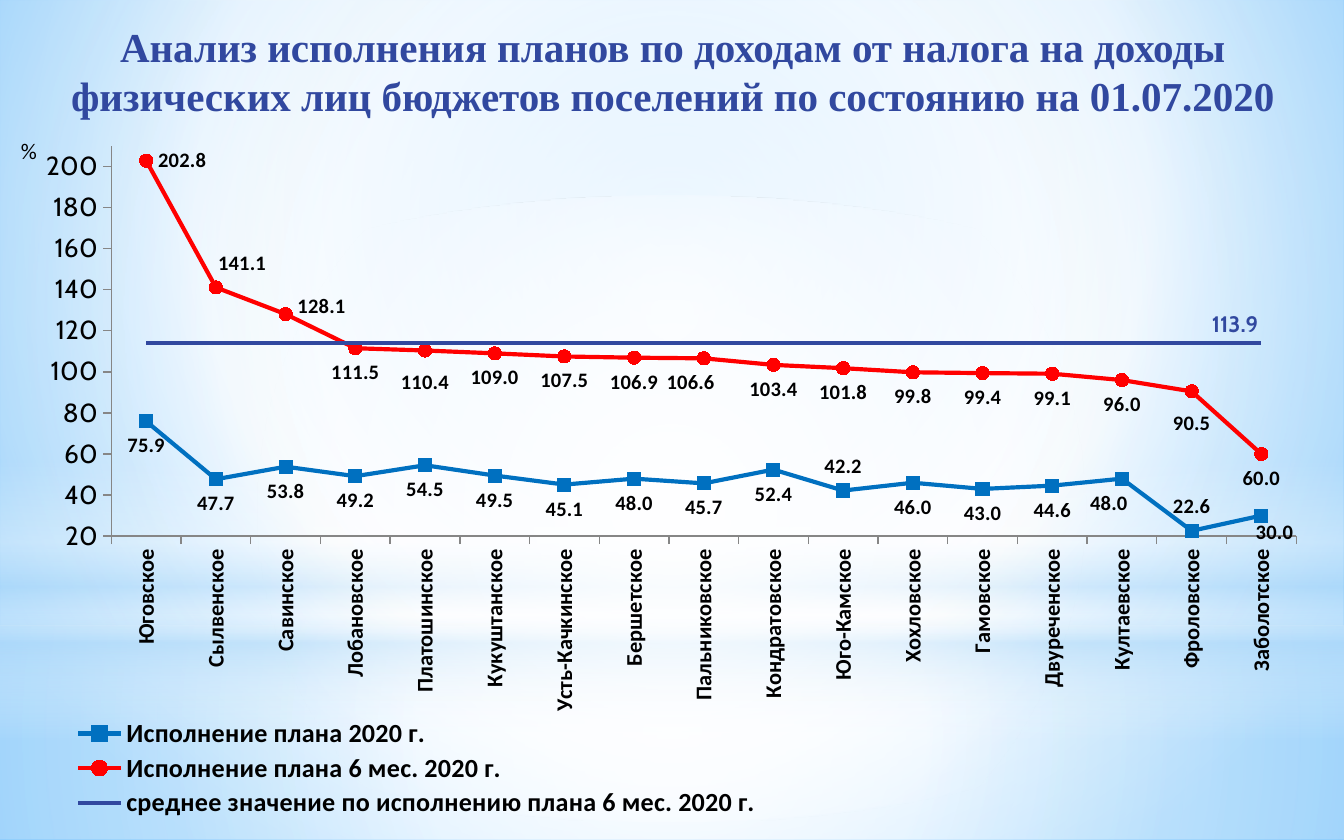
from lxml import etree
from pptx import Presentation
from pptx.chart.data import CategoryChartData
from pptx.dml.color import RGBColor
from pptx.enum.chart import (XL_CHART_TYPE, XL_LABEL_POSITION, XL_LEGEND_POSITION,
                             XL_MARKER_STYLE, XL_TICK_MARK)
from pptx.enum.shapes import MSO_SHAPE
from pptx.enum.text import MSO_ANCHOR, MSO_AUTO_SIZE, PP_ALIGN
from pptx.oxml import parse_xml
from pptx.util import Pt

ABOVE, BELOW, RIGHT = XL_LABEL_POSITION.ABOVE, XL_LABEL_POSITION.BELOW, XL_LABEL_POSITION.RIGHT
SQUARE, CIRCLE, NO_MARKER = XL_MARKER_STYLE.SQUARE, XL_MARKER_STYLE.CIRCLE, XL_MARKER_STYLE.NONE
RECTANGLE, OVAL = MSO_SHAPE.RECTANGLE, MSO_SHAPE.OVAL
LINE_MARKERS = XL_CHART_TYPE.LINE_MARKERS
LEGEND_BOTTOM = XL_LEGEND_POSITION.BOTTOM
TICK_OUTSIDE = XL_TICK_MARK.OUTSIDE
CENTER, TOP, NO_FIT = PP_ALIGN.CENTER, MSO_ANCHOR.TOP, MSO_AUTO_SIZE.NONE

BLACK = RGBColor(0x00, 0x00, 0x00)
WHITE = RGBColor(0xFF, 0xFF, 0xFF)
GREY = RGBColor(0x86, 0x86, 0x86)
NAVY = RGBColor(0x31, 0x48, 0x9F)
BLUE = RGBColor(0x00, 0x70, 0xC0)
RED = RGBColor(0xFF, 0x00, 0x00)
SKY = RGBColor(0x9E, 0xD5, 0xFF)
DEEP_SKY = RGBColor(0x5B, 0xB9, 0xFF)
PALE_SKY = RGBColor(0xB4, 0xDC, 0xFA)

DRAWING = "http://schemas.openxmlformats.org/drawingml/2006/main"
CHART = "http://schemas.openxmlformats.org/drawingml/2006/chart"
NUMBER_FORMAT = "#,##0.0"

TITLE = ("Анализ исполнения планов по доходам от налога на доходы "
         "физических лиц бюджетов поселений по состоянию на 01.07.2020")
SETTLEMENTS = ["Юговское", "Сылвенское", "Савинское", "Лобановское", "Платошинское",
               "Кукуштанское", "Усть-Качкинское", "Бершетское", "Пальниковское",
               "Кондратовское", "Юго-Камское", "Хохловское", "Гамовское", "Двуреченское",
               "Култаевское", "Фроловское", "Заболотское"]
YEAR_PLAN = [75.9, 47.7, 53.8, 49.2, 54.5, 49.5, 45.1, 48, 45.7, 52.4, 42.2, 46, 43, 44.6,
             48, 22.6, 30]
HALF_YEAR_PLAN = [202.8, 141.1, 128.1, 111.5, 110.4, 109, 107.5, 106.9, 106.6, 103.4, 101.8,
                  99.8, 99.4, 99.1, 96, 90.5, 60]
AVERAGE = [113.9] * len(SETTLEMENTS)
SERIES = [
    ("Исполнение плана 2020 г.", YEAR_PLAN, BLUE, SQUARE),
    ("Исполнение плана 6 мес. 2020 г.", HALF_YEAR_PLAN, RED, CIRCLE),
    ("среднее значение по исполнению плана 6 мес. 2020 г.", AVERAGE, NAVY, NO_MARKER),
]
POINT_LABELS = [
    (0, 10, ABOVE, 0, 0), (0, 14, BELOW, -0.01, 0), (0, 15, ABOVE, 0, 0),
    (0, 16, BELOW, 0.01, -0.01),
    (1, 0, RIGHT, 0, 0), (1, 1, ABOVE, 0.02, 0), (1, 2, RIGHT, 0, -0.01),
    (1, 4, BELOW, 0, 0.01), (1, 8, BELOW, -0.01, 0), (1, 15, BELOW, 0, 0.01),
    (2, 16, ABOVE, -0.02, 0),
]


def format_font(font, size, name, color=BLACK, bold=False):
    """Set the size, typeface, colour and weight of a font."""
    font.size, font.name, font.bold = Pt(size), name, bold
    font.color.rgb = color


def write_text(text_frame, text, align=CENTER, **font_format):
    """Write one formatted paragraph into a text frame."""
    paragraph = text_frame.paragraphs[0]
    paragraph.alignment = align
    run = paragraph.add_run()
    run.text = text
    format_font(run.font, **font_format)


def apply_gradient(fill, parent, stops, focus=None):
    """Give a fill a circular gradient, or a vertical one without a focus."""
    fill.solid()
    fill.fore_color.rgb = WHITE
    stop_xml = "".join(
        f'<a:gs pos="{position * 1000}"><a:srgbClr val="{color}">'
        f'<a:alpha val="{alpha * 1000}"/></a:srgbClr></a:gs>'
        for position, color, alpha in stops)
    direction = '<a:lin ang="5400000" scaled="0"/>'
    if focus:
        left, top, right, bottom = (share * 1000 for share in focus)
        direction = (f'<a:path path="circle"><a:fillToRect l="{left}" t="{top}" '
                     f'r="{right}" b="{bottom}"/></a:path>')
    gradient = parse_xml(f'<a:gradFill xmlns:a="{DRAWING}" rotWithShape="1">'
                         f'<a:gsLst>{stop_xml}</a:gsLst>{direction}</a:gradFill>')
    solid = parent.xpath(".//a:solidFill")[0]
    solid.getparent().replace(solid, gradient)


def add_glow(slide, kind, top, height, stops, focus=None):
    """Add a full-width translucent gradient layer."""
    shape = slide.shapes.add_shape(kind, 0, Pt(top), Pt(720), Pt(height))
    shape.shadow.inherit = False
    shape.line.fill.background()
    apply_gradient(shape.fill, shape.element.spPr, stops, focus)


def add_backdrop(slide):
    """Paint the background and its glowing layers."""
    middle = (50, 50, 50, 50)
    apply_gradient(slide.background.fill, slide.element.cSld,
                   [(0, SKY, 100), (60, WHITE, 100), (100, DEEP_SKY, 100)], (20, 10, 20, 60))
    add_glow(slide, RECTANGLE, 335, 115,
             [(0, WHITE, 91), (37, WHITE, 76), (100, PALE_SKY, 79)], middle)
    add_glow(slide, RECTANGLE, 0, 335,
             [(0, WHITE, 89), (48, WHITE, 62), (100, PALE_SKY, 79)], middle)
    add_glow(slide, RECTANGLE, 247, 150,
             [(0, WHITE, 0), (29, WHITE, 30), (45, PALE_SKY, 40), (55, WHITE, 26),
              (65, PALE_SKY, 60), (100, WHITE, 0)])
    add_glow(slide, OVAL, 105, 335, [(0, WHITE, 100), (56, WHITE, 0)], middle)


def add_title(slide):
    """Place and fill the title above the backdrop."""
    title = slide.shapes.title
    title.left, title.top, title.width, title.height = Pt(14.4), Pt(8), Pt(692), Pt(37.5)
    text_frame = title.text_frame
    text_frame.word_wrap, text_frame.auto_size = True, NO_FIT
    text_frame.vertical_anchor = TOP
    write_text(text_frame, TITLE, size=22, name="Times New Roman", color=NAVY, bold=True)
    slide.shapes.element.append(title.element)


def make_layout(target="", mode="edge", **shares):
    """Return a manual chart layout with the given shares of the chart area."""
    layout = etree.Element(f"{{{CHART}}}layout", nsmap={"c": CHART})
    manual = etree.SubElement(layout, f"{{{CHART}}}manualLayout")
    settings = [("layoutTarget", target), ("xMode", mode), ("yMode", mode), *shares.items()]
    for name, value in settings:
        if value != "":
            etree.SubElement(manual, f"{{{CHART}}}{name}").set("val", str(value))
    return layout


def format_series(series, color, marker):
    """Set the line, markers and common labels of a series."""
    series.smooth = False
    series.format.line.width = Pt(2.25)
    series.format.line.color.rgb = color
    series.marker.style = marker
    labels = series.data_labels
    labels.show_value = marker != NO_MARKER
    if marker != NO_MARKER:
        series.marker.size = 7
        for part in (series.marker.format.fill, series.marker.format.line.fill):
            part.solid()
            part.fore_color.rgb = color
        labels.position = BELOW
        labels.number_format, labels.number_format_is_linked = NUMBER_FORMAT, False
        format_font(labels.font, 11, "Calibri", bold=True)


def move_label(chart, series_index, point_index, position, x, y):
    """Set the side and the offset of a single data label."""
    label = chart.plots[0].series[series_index].points[point_index].data_label
    label.position = position
    if series_index == 2:
        format_font(label.font, 12, "Cabin", NAVY, True)
    else:
        format_font(label.font, 11, "Calibri", bold=True)
    index = chart.element.xpath(f'.//c:ser[c:idx/@val="{series_index}"]'
                                f'//c:dLbl/c:idx[@val="{point_index}"]')[0]
    index.addnext(parse_xml(f'<c:numFmt xmlns:c="{CHART}" formatCode="{NUMBER_FORMAT}" '
                            'sourceLinked="0"/>'))
    if x or y:
        index.addnext(make_layout(mode="", x=x, y=y))


def format_axes(chart):
    """Set the scale, ticks, fonts and title of both axes."""
    category_axis, value_axis = chart.category_axis, chart.value_axis
    for axis in (category_axis, value_axis):
        axis.has_major_gridlines = False
        axis.major_tick_mark = TICK_OUTSIDE
        axis.format.line.color.rgb = GREY
    format_font(category_axis.tick_labels.font, 12, "Calibri", bold=True)
    format_font(value_axis.tick_labels.font, 14, "Cabin")
    value_axis.minimum_scale, value_axis.maximum_scale, value_axis.major_unit = 20, 210, 20
    value_axis.tick_labels.number_format = "#,##0"
    value_axis.tick_labels.number_format_is_linked = False
    write_text(value_axis.axis_title.text_frame, "%", size=12, name="Calibri")
    chart.element.xpath(".//c:catAx/c:txPr/a:bodyPr")[0].set("rot", "-5400000")
    chart.element.xpath(".//c:valAx/c:title//a:bodyPr")[0].set("rot", "0")


def arrange_chart(chart):
    """Fix the places of the plot, the legend and the axis title."""
    chart.has_legend = True
    chart.legend.position, chart.legend.include_in_layout = LEGEND_BOTTOM, False
    format_font(chart.legend.font, 14, "Calibri", bold=True)
    for layout in chart.element.xpath(".//c:plotArea/c:layout | .//c:legend/c:layout"
                                      " | .//c:valAx/c:title/c:layout"):
        layout.getparent().remove(layout)
    chart.element.xpath(".//c:plotArea")[0].insert(
        0, make_layout("inner", x=0.082, y=0.099, w=0.903, h=0.515))
    chart.element.xpath(".//c:legend/c:legendPos")[0].addnext(
        make_layout(x=0.04, y=0.85, w=0.55, h=0.14))
    chart.element.xpath(".//c:valAx/c:title/c:tx")[0].addnext(make_layout(x=0.01, y=0.08))


def add_plan_chart(slide):
    """Add the line chart of plan execution by settlement."""
    data = CategoryChartData()
    data.categories = SETTLEMENTS
    for name, values, _, _ in SERIES:
        data.add_series(name, values)
    chart = slide.shapes.add_chart(LINE_MARKERS, Pt(2), Pt(38), Pt(703), Pt(406), data).chart
    chart.has_title = False
    format_font(chart.font, 18, "Cabin")
    chart.plots[0].vary_by_categories = False
    for series, (_, _, color, marker) in zip(chart.plots[0].series, SERIES):
        format_series(series, color, marker)
    for label in POINT_LABELS:
        move_label(chart, *label)
    format_axes(chart)
    arrange_chart(chart)


def main():
    """Build the slide and save the presentation."""
    presentation = Presentation()
    presentation.slide_width, presentation.slide_height = Pt(720), Pt(450)
    slide = presentation.slides.add_slide(presentation.slide_layouts[5])
    add_backdrop(slide)
    add_title(slide)
    add_plan_chart(slide)
    presentation.save("out.pptx")


if __name__ == "__main__":
    main()
